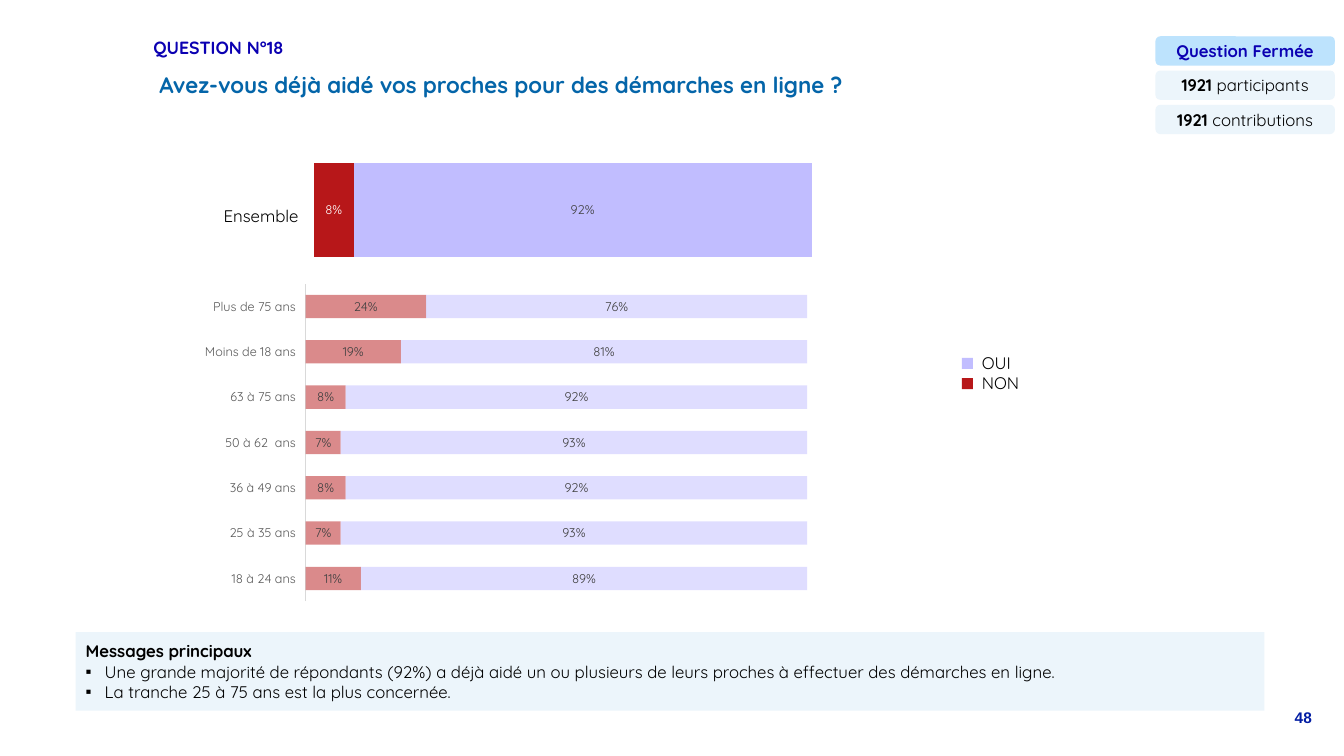
from dataclasses import dataclass

from lxml import etree
from pptx import Presentation
from pptx.chart.data import CategoryChartData
from pptx.dml.color import RGBColor
from pptx.enum.chart import XL_CHART_TYPE, XL_LABEL_POSITION, XL_TICK_LABEL_POSITION, XL_TICK_MARK
from pptx.enum.shapes import MSO_SHAPE
from pptx.enum.text import MSO_ANCHOR, MSO_AUTO_SIZE, PP_ALIGN
from pptx.oxml import parse_xml
from pptx.oxml.ns import nsdecls, qn
from pptx.shapes.autoshape import Shape
from pptx.slide import Slide
from pptx.text.text import TextFrame
from pptx.util import Pt

BAR_STACKED = XL_CHART_TYPE.BAR_STACKED
LABEL_CENTER = XL_LABEL_POSITION.CENTER
LABELS_LOW = XL_TICK_LABEL_POSITION.LOW
NO_TICK = XL_TICK_MARK.NONE
RECT, ROUNDED = MSO_SHAPE.RECTANGLE, MSO_SHAPE.ROUNDED_RECTANGLE
TOP, MIDDLE = MSO_ANCHOR.TOP, MSO_ANCHOR.MIDDLE
NO_AUTOFIT = MSO_AUTO_SIZE.NONE
LEFT, CENTER, RIGHT = PP_ALIGN.LEFT, PP_ALIGN.CENTER, PP_ALIGN.RIGHT

EMU_PER_PX = 9144  # 100 px to the inch
FONT = "Quicksand"
BLACK = RGBColor(0x00, 0x00, 0x00)
WHITE = RGBColor(0xFF, 0xFF, 0xFF)
INDIGO = RGBColor(0x0B, 0x00, 0xB2)
BLUE = RGBColor(0x04, 0x65, 0xA9)
PAGE_BLUE = RGBColor(0x01, 0x1C, 0xA3)
SKY = RGBColor(0xBD, 0xE3, 0xFD)
PALE_BLUE = RGBColor(0xEC, 0xF5, 0xFB)
RED = RGBColor(0xB7, 0x17, 0x19)
LILAC = RGBColor(0xC1, 0xBD, 0xFF)
AXIS_GRAY = RGBColor(0xD9, 0xD9, 0xD9)
LABEL_GRAY = RGBColor(0x40, 0x40, 0x40)
CATEGORY_GRAY = RGBColor(0x59, 0x59, 0x59)


@dataclass(frozen=True)
class Box:
    left: int
    top: int
    width: int
    height: int

    def emu(self) -> tuple[int, ...]:
        return tuple(n * EMU_PER_PX for n in (self.left, self.top, self.width, self.height))


@dataclass(frozen=True)
class Tag:
    strong: str
    plain: str
    fill: RGBColor
    color: RGBColor


@dataclass(frozen=True)
class Answer:
    name: str
    color: RGBColor
    overall: int
    overall_label: RGBColor
    by_age: tuple[float, ...]


@dataclass(frozen=True)
class BarChart:
    box: Box
    plot: tuple[float, float, float, float]  # x, y, w, h as shares of the chart
    categories: tuple[str, ...]
    values: tuple[tuple[float, ...], ...]
    label_colors: tuple[RGBColor, ...]
    number_format: str
    total: float
    show_categories: bool
    alpha: int


TAGS = (
    Tag("Question Fermée", "", SKY, INDIGO),
    Tag("1921 ", "participants", PALE_BLUE, BLACK),
    Tag("1921 ", "contributions", PALE_BLUE, BLACK),
)
AGES = ("18 à 24 ans", "25 à 35 ans", "36 à 49 ans", "50 à 62  ans",
        "63 à 75 ans", "Moins de 18 ans", "Plus de 75 ans")
ANSWERS = (
    Answer("NON", RED, 8, WHITE, (0.11, 0.07, 0.08, 0.07, 0.08, 0.19, 0.24)),
    Answer("OUI", LILAC, 92, LABEL_GRAY, (0.89, 0.93, 0.92, 0.93, 0.92, 0.81, 0.76)),
)
CHARTS = (
    BarChart(Box(195, 275, 721, 328), (0.15, 0.02, 0.69, 0.96), AGES,
             tuple(a.by_age for a in ANSWERS), (LABEL_GRAY, LABEL_GRAY),
             "0%", 1, True, 50),
    BarChart(Box(299, 113, 617, 191), (0.02, 0.02, 0.8, 0.96), ("1",),
             tuple((a.overall,) for a in ANSWERS), tuple(a.overall_label for a in ANSWERS),
             '0"%"', 100, False, 100),
)
MESSAGES = (
    "Une grande majorité de répondants (92%) a déjà aidé un ou plusieurs de leurs proches "
    "à effectuer des démarches en ligne.",
    "La tranche 25 à 75 ans est la plus concernée.",
)


def style(font, size: float, color: RGBColor, bold: bool = False, name: str = FONT) -> None:
    font.name, font.size, font.bold = name, Pt(size), bold
    font.color.rgb = color


def write(frame: TextFrame, text: str, size: float, color: RGBColor, bold: bool = False,
          align: PP_ALIGN = LEFT, anchor: MSO_ANCHOR = TOP, name: str = FONT) -> None:
    frame.word_wrap, frame.auto_size, frame.vertical_anchor = True, NO_AUTOFIT, anchor
    frame.text = text
    for paragraph in frame.paragraphs:
        paragraph.alignment = align
        for run in paragraph.runs:
            style(run.font, size, color, bold, name)


def add_text(slide: Slide, box: Box, text: str, size: float, color: RGBColor, **options) -> None:
    write(slide.shapes.add_textbox(*box.emu()).text_frame, text, size, color, **options)


def add_panel(slide: Slide, box: Box, fill: RGBColor, kind: MSO_SHAPE = RECT) -> Shape:
    panel = slide.shapes.add_shape(kind, *box.emu())
    panel.shadow.inherit = False
    panel.fill.solid()
    panel.fill.fore_color.rgb = fill
    panel.line.fill.background()
    return panel


def add_tag(slide: Slide, box: Box, tag: Tag) -> None:
    frame = add_panel(slide, box, tag.fill, ROUNDED).text_frame
    write(frame, tag.strong, 12, tag.color, bold=True, align=CENTER, anchor=MIDDLE)
    if tag.plain:
        run = frame.paragraphs[0].add_run()
        run.text = tag.plain
        style(run.font, 12, tag.color)


def add_bars(slide: Slide, bars: BarChart) -> None:
    data = CategoryChartData()
    data.categories = bars.categories
    for answer, values in zip(ANSWERS, bars.values):
        data.add_series(answer.name, values)
    chart = slide.shapes.add_chart(BAR_STACKED, *bars.box.emu(), data).chart
    chart.has_legend = chart.has_title = False
    style(chart.font, 9, LABEL_GRAY)

    ages, shares = chart.category_axis, chart.value_axis
    shares.minimum_scale, shares.maximum_scale = 0, bars.total
    shares.has_major_gridlines = shares.visible = False
    ages.visible = bars.show_categories
    ages.major_tick_mark = NO_TICK
    ages.tick_label_position = LABELS_LOW
    ages.format.line.color.rgb = AXIS_GRAY
    ages.format.line.width = Pt(0.75)
    style(ages.tick_labels.font, 9, CATEGORY_GRAY)

    plot = chart.plots[0]
    plot.gap_width, plot.overlap, plot.vary_by_categories = 95, 100, False
    for series, answer, label_color in zip(plot.series, ANSWERS, bars.label_colors):
        fill = series.format.fill
        fill.solid()
        fill.fore_color.rgb = answer.color
        if bars.alpha < 100:
            color = series.format.fill._xPr.find(qn("a:solidFill"))[0]
            etree.SubElement(color, qn("a:alpha"), val=str(bars.alpha * 1000))
        labels = series.data_labels
        labels.show_value, labels.position = True, LABEL_CENTER
        labels.number_format, labels.number_format_is_linked = bars.number_format, False
        style(labels.font, 9, label_color)

    # Fixed inner plot area
    area = chart._chartSpace.chart.plotArea
    for old in area.findall(qn("c:layout")):
        area.remove(old)
    sides = "".join(f'<c:{side} val="{share}"/>' for side, share in zip("xywh", bars.plot))
    area.insert(0, parse_xml(
        f'<c:layout {nsdecls("c")}><c:manualLayout><c:layoutTarget val="inner"/>'
        f'<c:xMode val="edge"/><c:yMode val="edge"/>{sides}</c:manualLayout></c:layout>'))


def add_messages(slide: Slide, box: Box) -> None:
    frame = add_panel(slide, box, PALE_BLUE).text_frame
    write(frame, "\n".join(("Messages principaux", *MESSAGES)), 12, BLACK, anchor=MIDDLE)
    heading, *points = frame.paragraphs
    heading.runs[0].font.bold = True
    for point in points:
        properties = point._p.get_or_add_pPr()
        properties.set("marL", str(19 * EMU_PER_PX))
        properties.set("indent", str(-19 * EMU_PER_PX))
        etree.SubElement(properties, qn("a:buFont"), typeface="Arial")
        etree.SubElement(properties, qn("a:buChar"), char="▪")


def main() -> None:
    deck = Presentation()
    deck.slide_width, deck.slide_height = 1333 * EMU_PER_PX, 750 * EMU_PER_PX
    slide = deck.slides.add_slide(deck.slide_layouts[5])

    # Heading
    title = slide.shapes.title
    title.left, title.top, title.width, title.height = Box(142, 34, 960, 27).emu()
    write(title.text_frame, "QUESTION N°18", 12.6, INDIGO, bold=True, anchor=MIDDLE)
    add_text(slide, Box(142, 64, 938, 40),
             " Avez-vous déjà aidé vos proches pour des démarches en ligne ?",
             16, BLUE, bold=True, anchor=MIDDLE)
    for row, tag in enumerate(TAGS):
        add_tag(slide, Box(1146, 36 + 34 * row, 178, 29), tag)

    # Charts and legend
    for bars in CHARTS:
        add_bars(slide, bars)
    add_text(slide, Box(190, 199, 116, 30), "Ensemble", 12, BLACK, align=RIGHT)
    legend = ANSWERS[::-1]
    add_text(slide, Box(964, 345, 80, 50), "\n".join(a.name for a in legend), 12, BLACK)
    for row, answer in enumerate(legend):
        add_panel(slide, Box(954, 355 + 20 * row, 11, 11), answer.color)

    # Key messages and page number
    add_messages(slide, Box(75, 627, 1179, 78))
    add_text(slide, Box(1114, 698, 197, 52), "48", 11, PAGE_BLUE,
             bold=True, align=RIGHT, name="Arial")
    deck.save("out.pptx")


if __name__ == "__main__":
    main()
